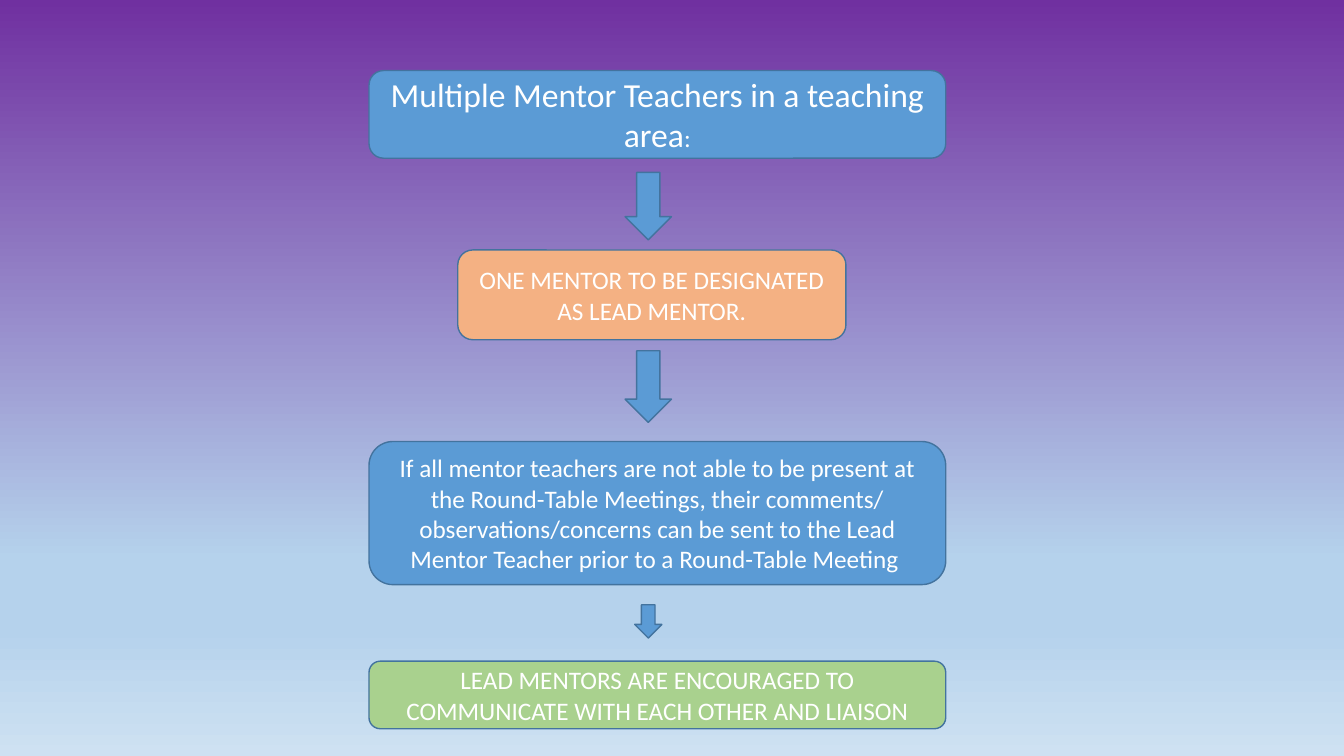
from lxml.etree import SubElement
from pptx import Presentation
from pptx.dml.color import RGBColor
from pptx.enum.shapes import MSO_SHAPE as Shape
from pptx.enum.text import MSO_ANCHOR, PP_ALIGN
from pptx.oxml.ns import qn
from pptx.util import Inches, Pt

BLUE = RGBColor(0x5B, 0x9B, 0xD5)
ORANGE = RGBColor(0xF4, 0xB1, 0x83)
GREEN = RGBColor(0xA9, 0xD1, 0x8E)
OUTLINE = RGBColor(0x43, 0x73, 0x9E)
WHITE = RGBColor(0xFF, 0xFF, 0xFF)
PURPLE = RGBColor(0x70, 0x30, 0xA0)
SKY = RGBColor(0xB5, 0xD2, 0xEC)
PALE_SKY = RGBColor(0xCE, 0xE1, 0xF2)

BACKGROUND = [(0, PURPLE), (74, SKY), (83, SKY), (100, PALE_SKY)]  # percent, colour
WIDE, NARROW = (3.66, 5.72), (4.54, 3.85)  # left, width
ARROW_CENTRE = 6.43

# outline, (left, width), top, height, fill, [(text, size)]
STEPS = [
    (Shape.ROUNDED_RECTANGLE, WIDE, 0.7, 0.87, BLUE,
     [("Multiple Mentor Teachers in a teaching area", 24), (":", 18)]),
    (Shape.ROUNDED_RECTANGLE, NARROW, 2.48, 0.89, ORANGE,
     [("ONE MENTOR TO BE DESIGNATED AS LEAD MENTOR.", 18)]),
    (Shape.ROUNDED_RECTANGLE, WIDE, 4.38, 1.42, BLUE,
     [("If all mentor teachers are not able to be present at the Round-Table "
       "Meetings, their comments/ observations/concerns can be sent to the Lead "
       "Mentor Teacher prior to a Round-Table Meeting ", 18)]),
    (Shape.FLOWCHART_ALTERNATE_PROCESS, WIDE, 6.56, 0.67, GREEN,
     [("LEAD MENTORS ARE ENCOURAGED TO COMMUNICATE WITH EACH OTHER AND LIAISON", 18)]),
]
ARROWS = [(1.71, 0.46, 0.67), (3.48, 0.46, 0.71), (6, 0.27, 0.33)]  # top, width, height


def paint_background(page):
    fill = page.background.fill
    fill.gradient()
    fill.gradient_angle = 270
    stops = page.element.find(".//" + qn("a:gsLst"))
    stops.clear()
    for percent, colour in BACKGROUND:
        stop = SubElement(stops, qn("a:gs"), pos=str(percent * 1000))
        SubElement(stop, qn("a:srgbClr"), val=str(colour))


def add_box(page, outline, left, top, width, height, colour):
    box = page.shapes.add_shape(outline, *map(Inches, (left, top, width, height)))
    box.shadow.inherit = False
    box.fill.solid()
    box.fill.fore_color.rgb = colour
    box.line.color.rgb = OUTLINE
    box.line.width = Pt(1)
    return box


def write_text(box, spans):
    frame = box.text_frame
    frame.word_wrap = True
    frame.vertical_anchor = MSO_ANCHOR.MIDDLE
    para = frame.paragraphs[0]
    para.alignment = PP_ALIGN.CENTER
    for text, size in spans:
        span = para.add_run()
        span.text = text
        span.font.color.rgb = WHITE
        for name, value in {"name": "Calibri", "size": Pt(size)}.items():
            setattr(span.font, name, value)


def main():
    deck = Presentation()
    deck.slide_width, deck.slide_height = Inches(13.33), Inches(7.5)
    page = deck.slides.add_slide(deck.slide_layouts[6])
    paint_background(page)
    for outline, (left, width), top, height, colour, spans in STEPS:
        write_text(add_box(page, outline, left, top, width, height, colour), spans)
    for top, width, height in ARROWS:
        add_box(page, Shape.DOWN_ARROW, ARROW_CENTRE - width / 2, top, width, height, BLUE)
    deck.save("out.pptx")


if __name__ == "__main__":
    main()
